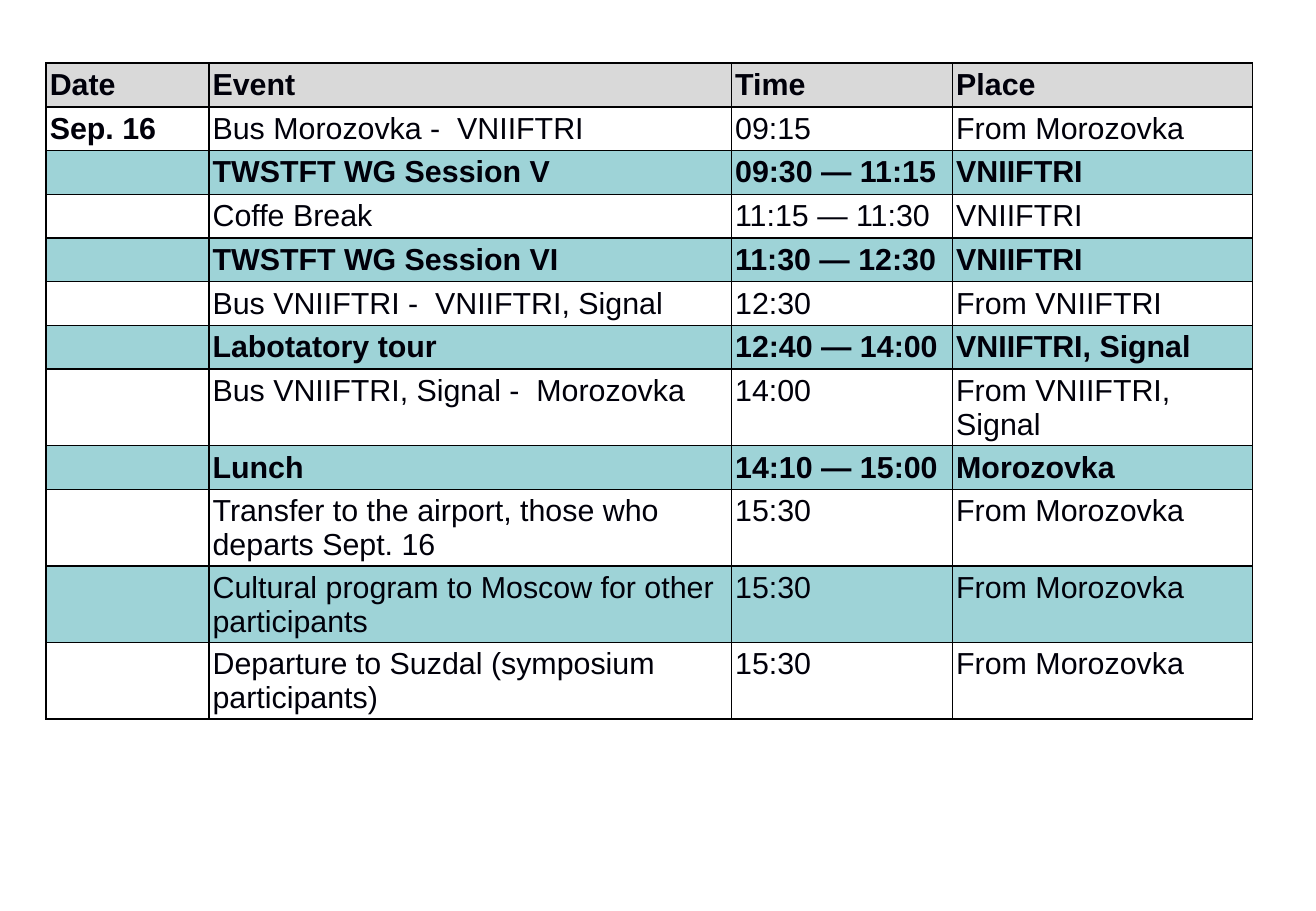
"""Build the Sep. 16 programme table slide."""
from lxml.etree import SubElement
from pptx import Presentation
from pptx.dml.color import RGBColor as Rgb
from pptx.oxml.ns import qn
from pptx.util import Inches, Pt

COLORS = {"head": "D9D9D9", "band": "9ED3D7", "text": "00000A", "line": "000001"}

# date, event, time, place, fill, bold, lines
ROWS = [
    ("Date", "Event", "Time", "Place", "head", True, 1),
    ("Sep. 16", "Bus Morozovka -  VNIIFTRI", "09:15", "From Morozovka", None, False, 1),
    ("", "TWSTFT WG Session V", "09:30 — 11:15", "VNIIFTRI", "band", True, 1),
    ("", "Coffe Break", "11:15 — 11:30", "VNIIFTRI", None, False, 1),
    ("", "TWSTFT WG Session VI", "11:30 — 12:30", "VNIIFTRI", "band", True, 1),
    ("", "Bus VNIIFTRI -  VNIIFTRI, Signal", "12:30", "From VNIIFTRI", None, False, 1),
    ("", "Labotatory tour", "12:40 — 14:00", "VNIIFTRI, Signal", "band", True, 1),
    ("", "Bus VNIIFTRI, Signal -  Morozovka", "14:00", "From VNIIFTRI, Signal",
     None, False, 2),
    ("", "Lunch", "14:10 — 15:00", "Morozovka", "band", True, 1),
    ("", "Transfer to the airport, those who departs Sept. 16", "15:30",
     "From Morozovka", None, False, 2),
    ("", "Cultural program to Moscow for other participants", "15:30",
     "From Morozovka", "band", False, 2),
    ("", "Departure to Suzdal (symposium participants)", "15:30",
     "From Morozovka", None, False, 2),
]
WIDTHS = [1.34, 4.3, 1.82, 2.47]
HEIGHTS = {1: 0.36, 2: 0.63}


def add_lines(cell):
    """Draw a thin line on all four sides of a cell."""
    props = cell._tc.get_or_add_tcPr()
    for side in ("a:lnL", "a:lnR", "a:lnT", "a:lnB"):
        line = SubElement(props, qn(side), w=str(Pt(1)))
        fill = SubElement(line, qn("a:solidFill"))
        SubElement(fill, qn("a:srgbClr"), val=COLORS["line"])


def set_cell(cell, text, fill, bold):
    """Write and style one cell."""
    cell.margin_left = cell.margin_bottom = Inches(0.03)
    cell.margin_right = cell.margin_top = Inches(0.04)
    add_lines(cell)
    if fill:
        cell.fill.solid()
        cell.fill.fore_color.rgb = Rgb.from_string(COLORS[fill])
    else:
        cell.fill.background()
    cell.text = text
    font = cell.text_frame.paragraphs[0].font
    font.name, font.size, font.bold = "Arial", Pt(18), bold
    font.color.rgb = Rgb.from_string(COLORS["text"])


def main():
    """Build and save the slide."""
    deck = Presentation()
    deck.slide_width, deck.slide_height = Inches(10.83), Inches(7.5)
    slide = deck.slides.add_slide(deck.slide_layouts[6])
    high = sum(HEIGHTS[row[-1]] for row in ROWS)
    table = slide.shapes.add_table(
        len(ROWS), len(WIDTHS), Inches(0.38), Inches(0.52),
        Inches(sum(WIDTHS)), Inches(high)).table
    table.first_row = table.horz_banding = False
    for col, width in zip(table.columns, WIDTHS):
        col.width = Inches(width)
    for row, (*texts, fill, bold, lines) in zip(table.rows, ROWS):
        row.height = Inches(HEIGHTS[lines])
        for col, (cell, text) in enumerate(zip(row.cells, texts)):
            set_cell(cell, text, fill, bold or col == 0)
    deck.save("out.pptx")


if __name__ == "__main__":
    main()
